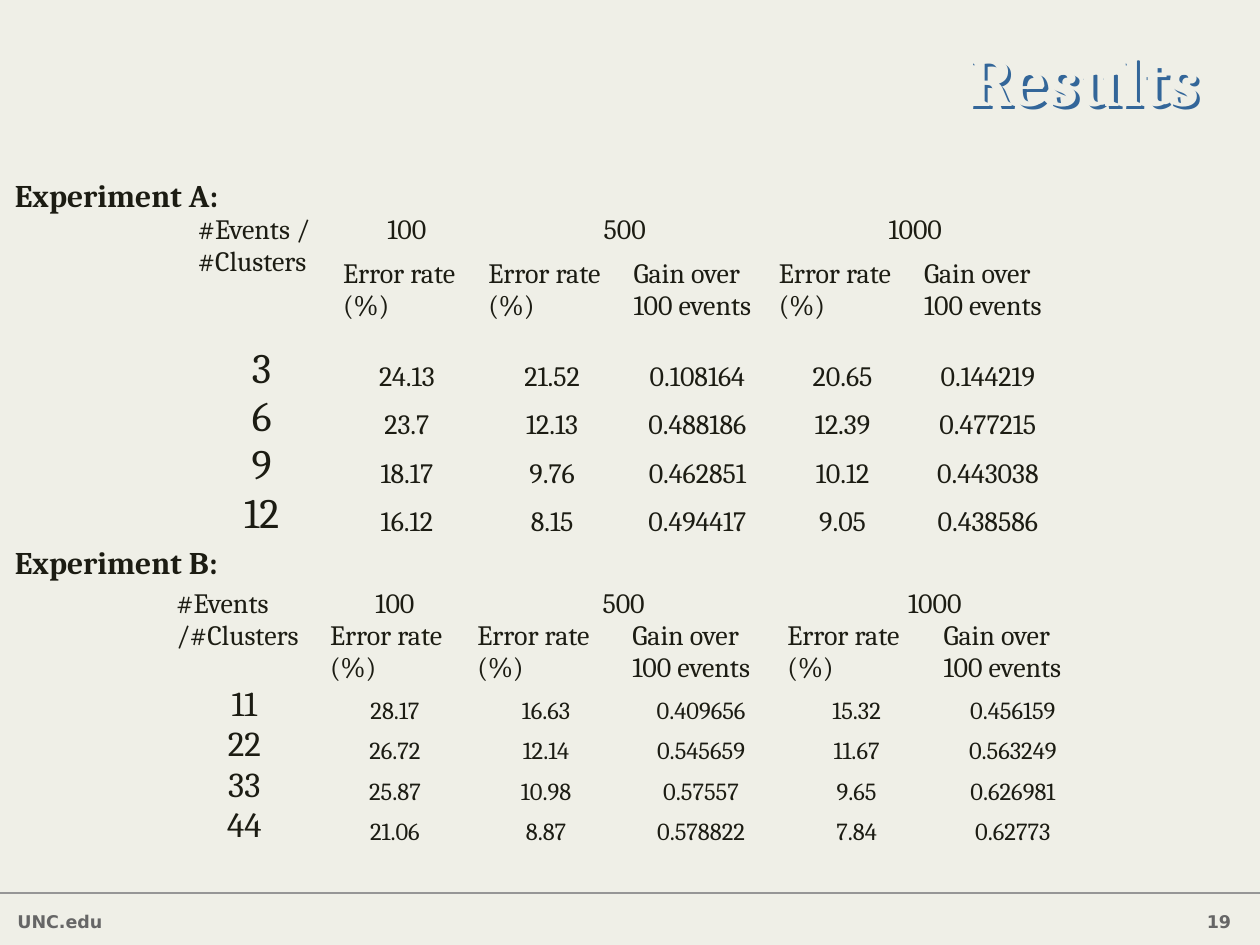
"""Build the results slide with the error rate tables of two experiments."""
from dataclasses import dataclass
from typing import Optional

from lxml.etree import SubElement
from pptx import Presentation
from pptx.dml.color import RGBColor
from pptx.enum.text import MSO_ANCHOR, MSO_AUTO_SIZE, PP_ALIGN
from pptx.oxml.ns import qn
from pptx.slide import Slide
from pptx.text.text import TextFrame
from pptx.util import Inches, Pt

PAPER = RGBColor(0xEF, 0xEF, 0xE7)
INK = RGBColor(0x1C, 0x1C, 0x13)
FOOTER_GREY = RGBColor(0x66, 0x66, 0x66)
RULE_GREY = RGBColor(0x96, 0x96, 0x96)
TITLE_SHADOW = RGBColor(0x33, 0x66, 0x99)
SERIF, SANS = "Cambria", "DejaVu Sans"
SLIDE_W, SLIDE_H = Inches(10), Inches(7.5)
GRID_COLUMNS, GRID_ROWS = 100, 75
PLAIN_TABLE = "{2D5ABB26-0587-4C30-8999-92F81FD0307C}"
CORNER = "#Events /#Clusters"
EVENTS = {1: "100", 2: "500", 4: "1000"}
ERROR, GAIN = "Error rate (%)", "Gain over 100 events"
MEASURES = (ERROR, ERROR, GAIN, ERROR, GAIN)


@dataclass(frozen=True)
class Box:
    """A place on the slide, in grid columns and rows."""
    left: float
    top: float
    width: float
    height: float

    def place(self) -> tuple[int, int, int, int]:
        """Return left, top, width and height as lengths."""
        return across(self.left), down(self.top), across(self.width), down(self.height)


@dataclass(frozen=True)
class Style:
    """The look of a run of text."""
    size: float
    font: str = SERIF
    color: RGBColor = INK
    bold: bool = False


@dataclass(frozen=True)
class Label:
    """A single line of text on the slide."""
    text: str
    box: Box
    style: Style
    grows: bool = False


@dataclass(frozen=True)
class Experiment:
    """A table of error rates and gains by cluster count."""
    box: Box
    columns: tuple[float, ...]
    rows: tuple[float, ...]
    cluster_size: float
    value_size: float
    results: tuple[tuple[str, ...], ...]


HEADING = Style(18, bold=True)
FOOTER = Style(10, SANS, FOOTER_GREY, True)
LABELS = (
    Label("UNC.edu", Box(0.4, 71.8, 10.6, 2.5), FOOTER),
    Label("19", Box(94.8, 71.8, 5.1, 4), FOOTER),
    Label("Experiment A:", Box(0.2, 13.5, 18.9, 4), HEADING, True),
    Label("Experiment B:", Box(0.2, 42.6, 18.9, 4), HEADING, True),
)
EXPERIMENTS = (
    Experiment(
        Box(15, 17, 69.2, 26.4), (11.53,) * 6, (3.5, 6.9) + (3.5,) * 4, 24, 16,
        (("3", "24.13", "21.52", "0.108164", "20.65", "0.144219"),
         ("6", "23.7", "12.13", "0.488186", "12.39", "0.477215"),
         ("9", "18.17", "9.76", "0.462851", "10.12", "0.443038"),
         ("12", "16.12", "8.15", "0.494417", "9.05", "0.438586"))),
    Experiment(
        Box(13.3, 46.7, 73.3, 21.3), (12.2, 11.7, 12.3, 12.3, 12.4, 12.4),
        (2.5, 5) + (3.2,) * 4, 20, 14,
        (("11", "28.17", "16.63", "0.409656", "15.32", "0.456159"),
         ("22", "26.72", "12.14", "0.545659", "11.67", "0.563249"),
         ("33", "25.87", "10.98", "0.57557", "9.65", "0.626981"),
         ("44", "21.06", "8.87", "0.578822", "7.84", "0.62773"))),
)


def across(columns: float) -> int:
    """Turn grid columns into a length."""
    return round(SLIDE_W * columns / GRID_COLUMNS)


def down(rows: float) -> int:
    """Turn grid rows into a length."""
    return round(SLIDE_H * rows / GRID_ROWS)


def write(frame: TextFrame, text: str, style: Style, align: Optional[PP_ALIGN] = None):
    """Write one run into the first paragraph and return that paragraph."""
    paragraph = frame.paragraphs[0]
    paragraph.alignment = align
    run = paragraph.add_run()
    run.text = text
    run.font.size = Pt(style.size)
    run.font.name = style.font
    run.font.bold = style.bold
    run.font.color.rgb = style.color
    return paragraph


def draw_title(slide: Slide, text: str, box: Box) -> None:
    """Fill the title placeholder and give it a blue shadow."""
    title = slide.shapes.title
    title.left, title.top, title.width, title.height = box.place()
    title.text_frame.vertical_anchor = MSO_ANCHOR.MIDDLE
    heading = write(title.text_frame, text, Style(40, SERIF, PAPER, True), PP_ALIGN.RIGHT)
    heading.line_spacing = 0.85
    title.fill.background()
    effects = SubElement(title.element.spPr, qn("a:effectLst"))
    shadow = SubElement(effects, qn("a:outerShdw"), dist="35921", dir="2700000",
                        algn="ctr", rotWithShape="0")
    SubElement(shadow, qn("a:srgbClr"), val=str(TITLE_SHADOW))


def draw_label(slide: Slide, label: Label) -> None:
    """Add an unwrapped line of text."""
    frame = slide.shapes.add_textbox(*label.box.place()).text_frame
    frame.word_wrap = False
    frame.auto_size = MSO_AUTO_SIZE.SHAPE_TO_FIT_TEXT if label.grows else MSO_AUTO_SIZE.NONE
    write(frame, label.text, label.style)


def draw_rule(slide: Slide, row: float) -> None:
    """Add the line above the footer."""
    rule = slide.shapes.add_connector(1, 0, down(row), SLIDE_W, down(row))
    rule.line.color.rgb = RULE_GREY
    rule.line.width = Pt(1)
    SubElement(rule.element.spPr, qn("a:effectLst"))


def write_cell(cell, text: str, size: float, align: Optional[PP_ALIGN] = PP_ALIGN.CENTER,
               anchor: MSO_ANCHOR = MSO_ANCHOR.TOP) -> None:
    """Write the text of one table cell."""
    cell.vertical_anchor = anchor
    paragraph = write(cell.text_frame, text, Style(size), align)
    paragraph.space_before = paragraph.space_after = Pt(6)


def draw_experiment(slide: Slide, experiment: Experiment) -> None:
    """Add the table of one experiment."""
    table = slide.shapes.add_table(len(experiment.rows), len(experiment.columns),
                                   *experiment.box.place()).table
    table.first_row = table.horz_banding = False
    table._tbl.tblPr.find(qn("a:tableStyleId")).text = PLAIN_TABLE
    for column, width in zip(table.columns, experiment.columns):
        column.width = across(width)
    for row, height in zip(table.rows, experiment.rows):
        row.height = down(height)
    for cell in table.iter_cells():
        cell.fill.background()
        cell.margin_left = cell.margin_right = Inches(0.07)
        cell.margin_top = cell.margin_bottom = 0
    table.cell(0, 0).merge(table.cell(1, 0))
    write_cell(table.cell(0, 0), CORNER, 16, None)
    for column, count in EVENTS.items():
        if column > 1:
            table.cell(0, column).merge(table.cell(0, column + 1))
        write_cell(table.cell(0, column), count, 16)
    for column, measure in enumerate(MEASURES, 1):
        write_cell(table.cell(1, column), measure, 16, None)
    for row, (clusters, *values) in enumerate(experiment.results, 2):
        write_cell(table.cell(row, 0), clusters, experiment.cluster_size)
        for column, value in enumerate(values, 1):
            write_cell(table.cell(row, column), value, experiment.value_size,
                       anchor=MSO_ANCHOR.BOTTOM)


def main() -> None:
    """Build and save the slide."""
    deck = Presentation()
    deck.slide_width, deck.slide_height = SLIDE_W, SLIDE_H
    slide = deck.slides.add_slide(deck.slide_layouts[5])
    slide.background.fill.solid()
    slide.background.fill.fore_color.rgb = PAPER
    draw_rule(slide, 70.9)
    draw_title(slide, "Results", Box(24.6, 0.5, 71.6, 12.5))
    for experiment in EXPERIMENTS:
        draw_experiment(slide, experiment)
    for label in LABELS:
        draw_label(slide, label)
    deck.save("out.pptx")


if __name__ == "__main__":
    main()
